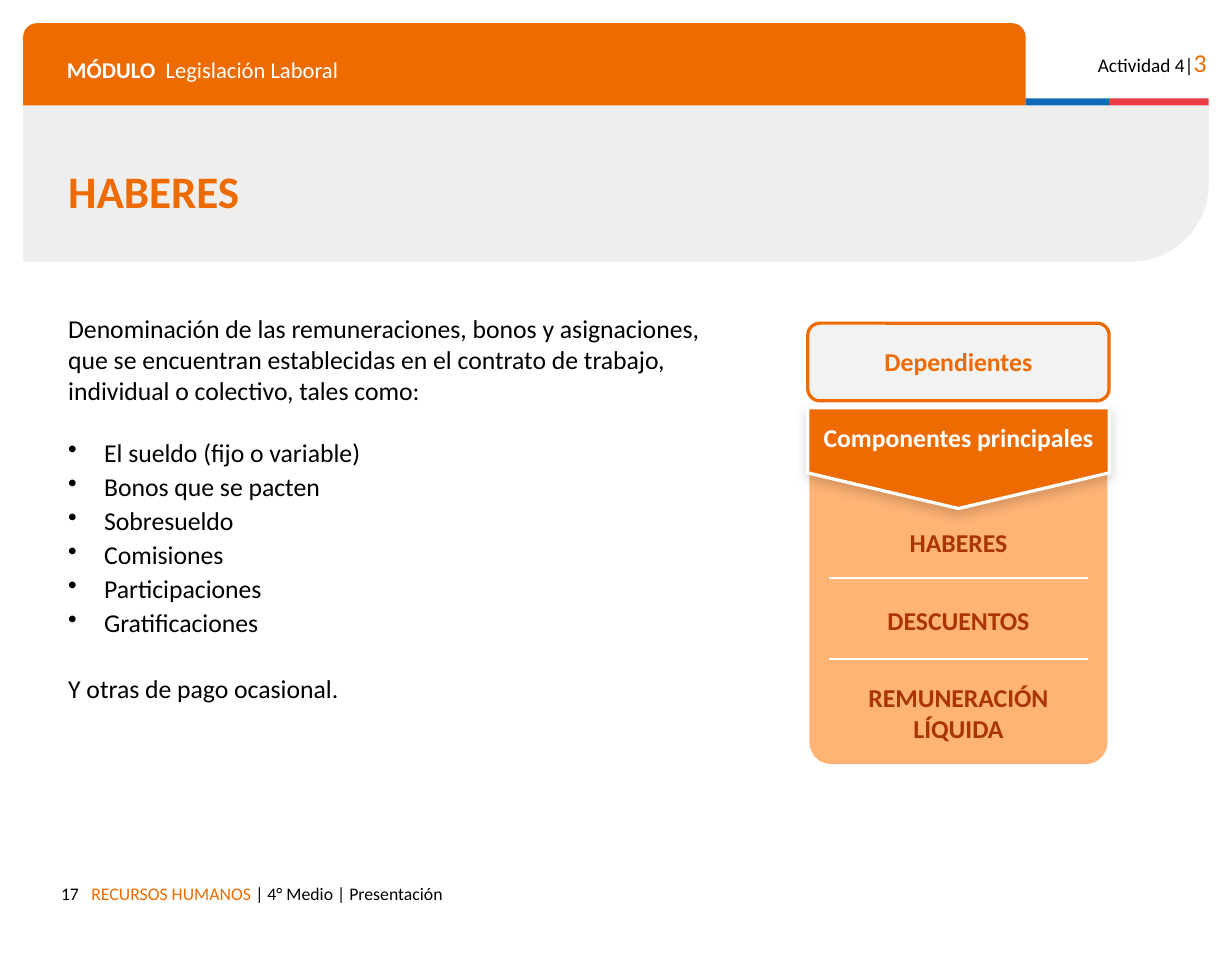
from lxml import etree
from pptx import Presentation
from pptx import util as u
from pptx.dml.color import RGBColor
from pptx.enum import shapes, text
from pptx.oxml.ns import qn

COLORS = {
    "orange": "ED6B00", "peach": "FFB375", "rust": "A93501",
    "gray": "EEEEEE", "light": "F2F2F2", "blue": "0F69B4",
    "red": "EB3C46", "white": "FFFFFF", "black": "000000",
}
FONT = "Calibri"
KIND = shapes.MSO_SHAPE
ALIGN = text.PP_ALIGN
ANCHOR = text.MSO_ANCHOR


def color(name):
    return RGBColor.from_string(COLORS[name])


def add_block(page, kind, box, fill, line=None, adjust=()):
    block = page.shapes.add_shape(kind, *map(u.Inches, box))
    block.shadow.inherit = False
    block.fill.solid()
    block.fill.fore_color.rgb = color(fill)
    if line:
        block.line.color.rgb = color(line)
        block.line.width = u.Pt(2)
    else:
        block.line.fill.background()
    for index, value in enumerate(adjust):
        block.adjustments[index] = value
    return block


def add_text(page, box, paragraphs, size, align=ALIGN.LEFT, bold=None,
             inset=0.1, anchor=ANCHOR.TOP):
    frame = page.shapes.add_textbox(*map(u.Inches, box)).text_frame
    frame.word_wrap = True
    frame.vertical_anchor = anchor
    frame.margin_left = frame.margin_right = u.Inches(0.1)
    frame.margin_top = frame.margin_bottom = u.Inches(inset)
    for index, spans in enumerate(paragraphs):
        para = frame.paragraphs[0] if index == 0 else frame.add_paragraph()
        para.alignment = align
        para.font.name = FONT
        para.font.size = u.Pt(size)
        para.font.bold = bold
        for words, shade in spans:
            span = para.add_run()
            span.text = words
            span.font.color.rgb = color(shade)
    return frame


def add_bullet(para):
    props = para._p.get_or_add_pPr()
    props.set("marL", str(u.Inches(0.31)))
    props.set("indent", str(u.Inches(-0.31)))
    etree.SubElement(props, qn("a:buChar")).set("char", "•")


def add_drop_shadow(block):
    effects = block._element.spPr.find(qn("a:effectLst"))
    shadow = etree.SubElement(
        effects, qn("a:outerShdw"), blurRad=str(u.Pt(7)), dist=str(u.Pt(3)),
        dir="5400000", algn="t", rotWithShape="0")
    shade = etree.SubElement(shadow, qn("a:srgbClr"), val=COLORS["black"])
    etree.SubElement(shade, qn("a:alpha"), val="17000")


def add_divider(page, left, right, top):
    line = page.shapes.add_connector(
        shapes.MSO_CONNECTOR.STRAIGHT,
        *map(u.Inches, (left, top, right, top)))
    line.line.color.rgb = color("white")
    line.line.width = u.Pt(1)
    etree.SubElement(line._element.spPr, qn("a:effectLst"))


def add_header(page, box):
    left, top, width, height = box
    bar, first, strip = 8.65, 0.72, 0.06
    bottom, edge = top + height, left + bar
    panel = add_block(page, KIND.ROUND_1_RECTANGLE,
                      (left, bottom, width, 1.35), "gray", adjust=[0.5])
    panel.rotation = 180
    panel._element.spPr.xfrm.set("flipH", "1")
    add_block(page, KIND.ROUND_2_SAME_RECTANGLE, (left, top, bar, height),
              "orange", adjust=[0.167, 0])
    add_block(page, KIND.RECTANGLE,
              (edge, bottom - strip, first, strip), "blue")
    add_block(page, KIND.RECTANGLE,
              (edge + first, bottom - strip, width - bar - first, strip), "red")

    activity = add_text(page, (left + 9.03, top + 0.1, 1.28, 0.38),
                        [[("Actividad 4|", "black"), ("3", "orange")]],
                        12, ALIGN.RIGHT)
    activity.paragraphs[0].runs[1].font.size = u.Pt(16)
    module = add_text(page, (left + 0.28, top + 0.18, 8.14, 0.35),
                      [[("MÓDULO ", "white"),
                        (" Legislación Laboral", "white")]], 14)
    module.paragraphs[0].runs[0].font.bold = True
    title = add_text(page, (left + 0.29, top + 0.97, 5.45, 1.04),
                     [[("HABERES", "orange")]], 28, bold=True,
                     anchor=ANCHOR.MIDDLE)
    title.paragraphs[0].line_spacing = 0.8


def add_body(page, box):
    intro = ("Denominación de las remuneraciones, bonos y asignaciones, "
             "que se encuentran establecidas en el contrato de trabajo, "
             "individual o colectivo, tales como:")
    items = ["El sueldo (fijo o variable)", "Bonos que se pacten",
             "Sobresueldo", "Comisiones", "Participaciones", "Gratificaciones"]
    lines = [intro, *items, "Y otras de pago ocasional."]
    frame = add_text(page, box, [[(line, "black")] for line in lines], 16,
                     inset=0.05)
    _, *bullets, closing = frame.paragraphs
    for para in bullets:
        para.space_after = u.Pt(2)
        add_bullet(para)
    for para in (bullets[0], closing):
        para.space_before = u.Pt(19.5)


def add_components(page, box):
    left, top, width, height = box
    card_top, arrow_height = top + 0.8, 0.87
    add_block(page, KIND.ROUNDED_RECTANGLE,
              (left, card_top, width, height - 0.8), "peach", "white", [0.077])
    middle = card_top - 0.1 + arrow_height / 2 - 0.02 + 0.05
    arrow = add_block(page, KIND.PENTAGON,
                      (left + (width - arrow_height) / 2, middle - width / 2,
                       arrow_height, width), "orange", "white", [0.353])
    arrow.width, arrow.height = u.Inches(arrow_height), u.Inches(width)
    arrow.rotation = 90
    add_drop_shadow(arrow)
    add_block(page, KIND.ROUNDED_RECTANGLE, (left, top, width, 0.67),
              "light", "orange", [0.155])
    labels = [
        ("Dependientes", 0.15, "orange", 0),
        ("Componentes principales", 0.8, "white", 0),
        ("HABERES", 1.71, "rust", 0),
        ("DESCUENTOS", 2.38, "rust", 0),
        ("REMUNERACIÓN LÍQUIDA", 3.05, "rust", 0.13),
    ]
    for words, offset, shade, margin in labels:
        add_text(page, (left + margin, top + offset, width - 2 * margin, 0.37),
                 [[(words, shade)]], 16, ALIGN.CENTER, True, 0.05)
    for offset in (2.2, 2.9):
        add_divider(page, left + 0.18, left + width - 0.18, top + offset)


def add_footer(page, box):
    left, top, width, height = box
    add_text(page, (left, top, 0.58, height), [[("17", "black")]], 11,
             ALIGN.RIGHT)
    add_text(page, (left + 0.49, top, width - 0.49, height),
             [[("RECURSOS HUMANOS ", "orange"),
               ("| 4° Medio | Presentación", "black")]], 11)


def main():
    deck = Presentation()
    deck.slide_width, deck.slide_height = u.Inches(10.63), u.Inches(8.27)
    page = deck.slides.add_slide(deck.slide_layouts[6])
    add_header(page, (0.2, 0.2, 10.23, 0.71))
    add_body(page, (0.49, 2.65, 5.82, 3.5))
    add_components(page, (6.97, 2.79, 2.6, 3.82))
    add_footer(page, (0.2, 7.53, 7.63, 0.38))
    deck.save("out.pptx")


if __name__ == "__main__":
    main()
